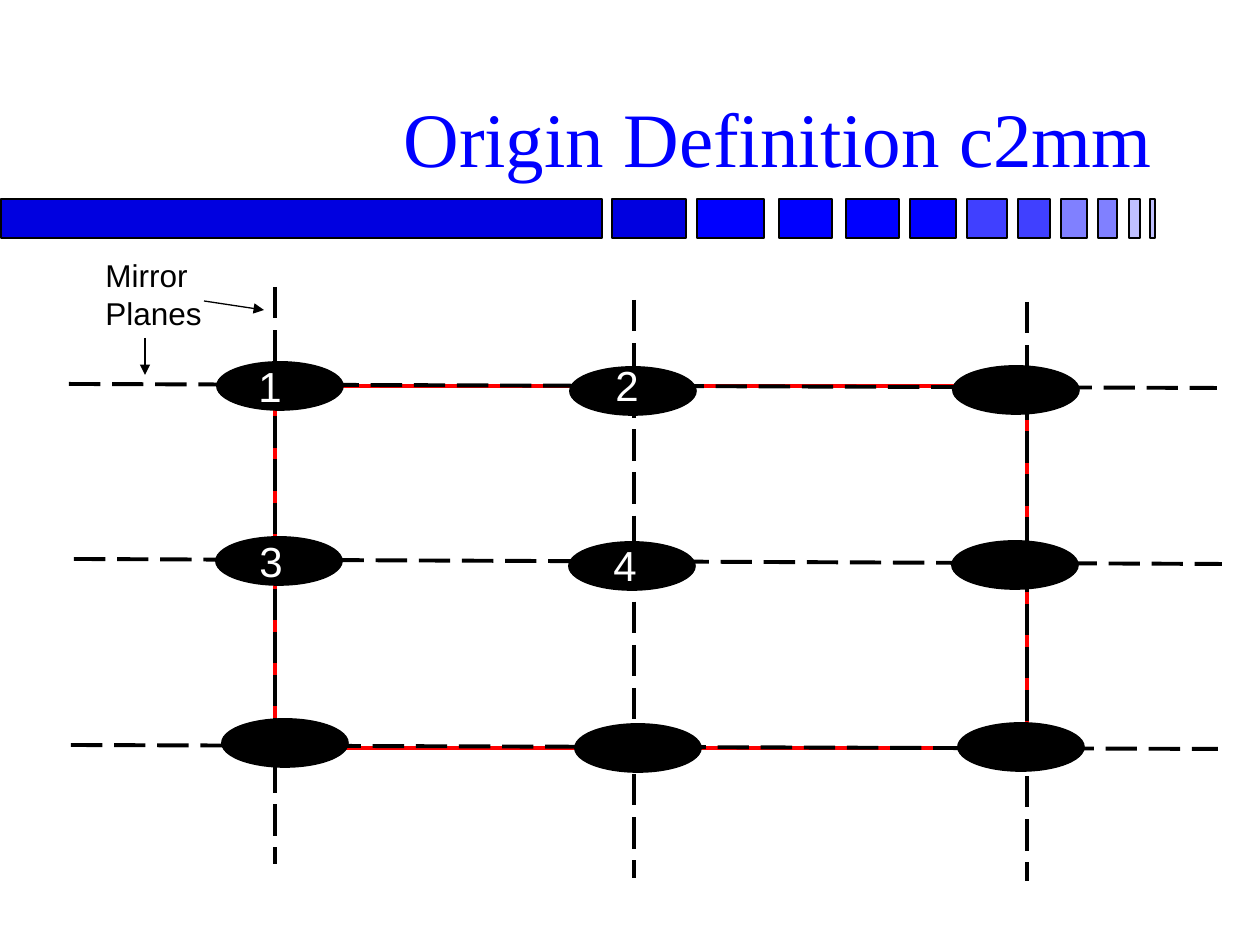
"""Build the slide on the origin definition of plane group c2mm."""
from lxml import etree
from pptx import Presentation
from pptx.dml.color import RGBColor
from pptx.enum.dml import MSO_LINE
from pptx.enum.shapes import MSO_CONNECTOR, MSO_SHAPE
from pptx.enum.text import MSO_ANCHOR, PP_ALIGN
from pptx.oxml.ns import qn
from pptx.util import Emu, Pt

RECT, OVAL = MSO_SHAPE.RECTANGLE, MSO_SHAPE.OVAL
STRAIGHT = MSO_CONNECTOR.STRAIGHT
LONG_DASH = MSO_LINE.LONG_DASH
TOP, BOTTOM = MSO_ANCHOR.TOP, MSO_ANCHOR.BOTTOM
LEFT, RIGHT = PP_ALIGN.LEFT, PP_ALIGN.RIGHT
PX = 914400 / 126
COLORS = {
    "black": "000000", "white": "FFFFFF", "red": "FF0000", "navy": "0000E0",
    "blue": "0000FF", "mid": "4040FF", "light": "8080FF", "pale": "C0C0FF",
}


def px(*values):
    return [Emu(round(v * PX)) for v in values]


def color(name):
    return RGBColor.from_string(COLORS[name])


prs = Presentation()
prs.slide_width, prs.slide_height = px(1260, 945)
s = prs.slides.add_slide(prs.slide_layouts[6])

bars = [
    (1, 601, "navy"), (612, 74, "navy"), (697, 67, "blue"), (779, 53, "blue"),
    (846, 53, "blue"), (910, 46, "blue"), (967, 40, "mid"), (1018, 32, "mid"),
    (1061, 26, "light"), (1098, 19, "light"), (1129, 11, "pale"), (1150, 5, "pale"),
]
shapes = [(RECT, x, 199, w, 39, fill, "black", 1) for x, w, fill in bars]
shapes.append((RECT, 275, 386, 752, 362, None, "red", 2.25))

columns = [(217, 0), (570, 5), (953, 4)]
rows = [(362, 0), (537, -1), (719, 5)]
for x, dy in columns:
    for y, dx in rows:
        shapes.append((OVAL, x + dx, y + dy, 126, 48, "black", "black", 1))

for kind, x, y, w, h, fill, line, width in shapes:
    sp = s.shapes.add_shape(kind, *px(x, y, w, h))
    sp.shadow.inherit = False
    if fill:
        sp.fill.solid()
        sp.fill.fore_color.rgb = color(fill)
    else:
        sp.fill.background()
    sp.line.color.rgb = color(line)
    sp.line.width = Pt(width)

mirrors = [
    (74, 559, 1222, 564), (634, 300, 634, 878), (1027, 302, 1027, 881),
    (275, 287, 275, 864), (69, 384, 1217, 388), (71, 745, 1218, 749),
]
arrows = [(204, 301, 264, 310), (145, 338, 145, 375)]
for ends in mirrors + arrows:
    cxn = s.shapes.add_connector(STRAIGHT, *px(*ends))
    cxn.line.color.rgb = color("black")
    if ends in mirrors:
        cxn.line.width = Pt(2.25)
        cxn.line.dash_style = LONG_DASH
    else:
        cxn.line.width = Pt(0.75)
        etree.SubElement(cxn.line._get_or_add_ln(), qn("a:tailEnd"), type="triangle")
    etree.SubElement(cxn._element.spPr, qn("a:effectLst"))

title = {"size": Pt(44), "name": "Times New Roman"}
number = {"size": Pt(24), "name": "Arial"}
label = {"size": Pt(18), "name": "Arial"}
texts = [
    ("Origin Definition c2mm", (94, 26, 1071, 163), title, "blue", RIGHT, BOTTOM),
    ("1", (246, 354, 62, 63), number, "white", LEFT, TOP),
    ("2", (603, 353, 62, 63), number, "white", LEFT, TOP),
    ("3", (247, 529, 62, 63), number, "white", LEFT, TOP),
    ("4", (601, 533, 62, 63), number, "white", LEFT, TOP),
    ("Mirror Planes", (93, 250, 193, 88), label, "black", LEFT, TOP),
]
for text, box, font, name, align, anchor in texts:
    tf = s.shapes.add_textbox(*px(*box)).text_frame
    tf.word_wrap = True
    tf.vertical_anchor = anchor
    p = tf.paragraphs[0]
    p.alignment = align
    r = p.add_run()
    r.text = text
    for key, value in font.items():
        setattr(r.font, key, value)
    r.font.color.rgb = color(name)

prs.save("out.pptx")
